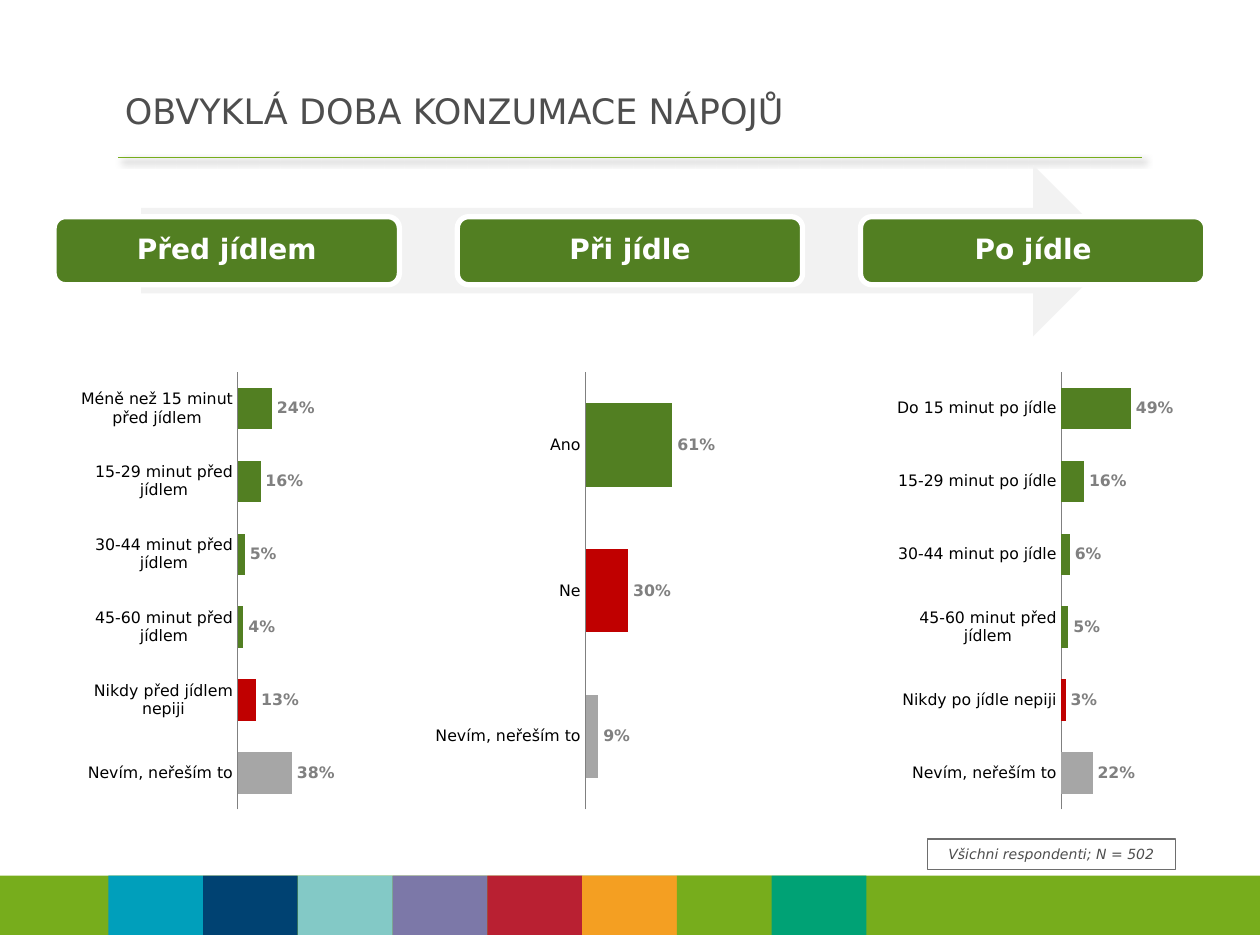
import pptx
import pptx.util
import pptx.chart.data
import pptx.dml.color
import pptx.enum.chart
import pptx.enum.shapes
import pptx.enum.text
import pptx.oxml
from pptx.oxml.ns import nsdecls
from pptx.util import Inches

FACE = "DejaVu Sans"
HUES = {
    "leaf": "527F22", "lime": "77AD1C", "red": "C00000", "grey": "A6A6A6",
    "pale": "F2F2F2", "white": "FFFFFF", "black": "000000", "text": "4E4E4E",
    "label": "808080", "edge": "6E6E6E", "sky": "009FBB", "navy": "004272",
    "aqua": "83C9C6", "plum": "7C78A8", "wine": "B92032", "gold": "F49F22",
    "jade": "00A275",
}
SHAPE = pptx.enum.shapes.MSO_SHAPE
ALIGN = pptx.enum.text.PP_ALIGN
MID = pptx.enum.text.MSO_ANCHOR.MIDDLE


def hue(name):
    return pptx.dml.color.RGBColor.from_string(HUES[name])


def style(font, size, tint, **more):
    for key, val in {"name": FACE, "size": pptx.util.Pt(size), **more}.items():
        setattr(font, key, val)
    font.color.rgb = hue(tint)


def paint(fill, tint):
    fill.solid()
    fill.fore_color.rgb = hue(tint)


def add_form(slide, kind, box, tint=None, edge=None, width=0.75):
    form = slide.shapes.add_shape(kind, *map(Inches, box))
    form.shadow.inherit = False
    if tint:
        paint(form.fill, tint)
    else:
        form.fill.background()
    if edge:
        form.line.color.rgb = hue(edge)
        form.line.width = pptx.util.Pt(width)
    else:
        form.line.fill.background()
    return form


def write(form, text, align, size, tint, **more):
    para = form.text_frame.paragraphs[0]
    para.alignment = align
    run = para.add_run()
    run.text = text
    style(run.font, size, tint, **more)
    return para


def add_head(slide, box, text):
    title = slide.shapes.title
    left, top, wide, high = map(Inches, box)
    for key, val in {"left": left, "top": top, "width": wide, "height": high}.items():
        setattr(title, key, val)
    title.text_frame.vertical_anchor = MID
    title.text_frame.word_wrap = True
    para = write(title, text, ALIGN.LEFT, 20, "text")
    para.space_after = pptx.util.Pt(3)

    # Rule with a soft shadow below the title
    rule = slide.shapes.add_connector(
        pptx.enum.shapes.MSO_CONNECTOR.STRAIGHT,
        Inches(0.94), Inches(1.25), Inches(9.06), Inches(1.25))
    rule.line.color.rgb = hue("lime")
    rule.line.width = pptx.util.Pt(0.75)
    rule._element.spPr.append(pptx.oxml.parse_xml(
        f'<a:effectLst {nsdecls("a")}>'
        '<a:outerShdw blurRad="50800" dist="38100" dir="2700000" algn="tl" rotWithShape="0">'
        '<a:srgbClr val="000000"><a:alpha val="40000"/></a:srgbClr>'
        '</a:outerShdw></a:effectLst>'))


def add_band(slide, box, tints):
    left, top, wide, high = box
    add_form(slide, SHAPE.RECTANGLE, box, "lime")
    step = 0.752
    for i, tint in enumerate(tints):
        tile = (left + 0.86 + i * step, top, step, high)
        add_form(slide, SHAPE.RECTANGLE, tile, tint)


def add_flow(slide, box, steps):
    left, top, wide, high = box
    add_form(slide, SHAPE.RIGHT_ARROW, (1.12, top, 7.76, high), "pale")
    card, tall = 2.74, 0.54
    pitch = (wide - card) / (len(steps) - 1)
    for i, text in enumerate(steps):
        place = (left + i * pitch, top + (high - tall) / 2, card, tall)
        form = add_form(slide, SHAPE.ROUNDED_RECTANGLE, place, "leaf", "white", 3)
        form.text_frame.vertical_anchor = MID
        para = write(form, text, ALIGN.CENTER, 16, "white", bold=True)
        para.line_spacing = 0.9


def add_bars(slide, box, rows):
    data = pptx.chart.data.CategoryChartData(number_format="0%")
    data.categories = [name for name, _ in rows]
    data.add_series("Series 1", [val for _, val in rows])
    chart = slide.shapes.add_chart(
        pptx.enum.chart.XL_CHART_TYPE.BAR_CLUSTERED, *map(Inches, box), data).chart
    chart.has_legend = chart.has_title = False
    style(chart.font, 18, "black")

    # Axes
    cat, val = chart.category_axis, chart.value_axis
    none = pptx.enum.chart.XL_TICK_MARK.NONE
    for key, item in {"reverse_order": True, "major_tick_mark": none,
                      "minor_tick_mark": none}.items():
        setattr(cat, key, item)
    style(cat.tick_labels.font, 9, "black")
    cat.format.line.color.rgb = hue("label")
    cat.format.line.width = pptx.util.Pt(0.75)
    for key, item in {"minimum_scale": 0, "maximum_scale": 1, "visible": False,
                      "has_major_gridlines": False}.items():
        setattr(val, key, item)

    # Bars: the last two answers stand out
    plot = chart.plots[0]
    plot.gap_width = 75
    plot.vary_by_categories = False
    bars = plot.series[0]
    bars.invert_if_negative = False
    paint(bars.format.fill, "leaf")
    for i, tint in enumerate(("red", "grey"), len(rows) - 2):
        paint(bars.points[i].format.fill, tint)

    # Value labels
    tags = bars.data_labels
    for key, item in {"show_value": True, "number_format": "0%",
                      "number_format_is_linked": False,
                      "position": pptx.enum.chart.XL_LABEL_POSITION.OUTSIDE_END}.items():
        setattr(tags, key, item)
    style(tags.font, 9, "label", bold=True)

    # Fixed plot area
    area = chart._chartSpace.chart.plotArea
    for old in area.findall(pptx.oxml.ns.qn("c:layout")):
        area.remove(old)
    spots = "".join(f'<c:{key} val="{item}"/>' for key, item in (
        ("layoutTarget", "inner"), ("xMode", "edge"), ("yMode", "edge"),
        ("x", 0.477), ("y", 0.127), ("w", 0.416), ("h", 0.873)))
    area.insert(0, pptx.oxml.parse_xml(
        f'<c:layout {nsdecls("c")}><c:manualLayout>{spots}</c:manualLayout></c:layout>'))


def add_note(slide, box, text):
    form = add_form(slide, SHAPE.RECTANGLE, box, edge="edge")
    form.text_frame.vertical_anchor = MID
    write(form, text, ALIGN.CENTER, 8, "text", italic=True)


def main():
    deck = pptx.Presentation()
    deck.slide_width, deck.slide_height = Inches(10), Inches(7.5)
    slide = deck.slides.add_slide(deck.slide_layouts[5])

    add_band(slide, (0, 6.95, 10, 0.47),
             ("sky", "navy", "aqua", "plum", "wine", "gold", "lime", "jade"))
    add_head(slide, (0.89, 0.62, 8.87, 0.51), "OBVYKLÁ DOBA KONZUMACE NÁPOJŮ")

    # One chart for each step
    charts = (
        (0.59, (("Méně než 15 minut před jídlem", 0.24),
                ("15-29 minut před jídlem", 0.16),
                ("30-44 minut před jídlem", 0.05),
                ("45-60 minut před jídlem", 0.04),
                ("Nikdy před jídlem nepiji", 0.13),
                ("Nevím, neřeším to", 0.38))),
        (3.35, (("Ano", 0.61), ("Ne", 0.3), ("Nevím, neřeším to", 0.09))),
        (7.12, (("Do 15 minut po jídle", 0.49),
                ("15-29 minut po jídle", 0.16),
                ("30-44 minut po jídle", 0.06),
                ("45-60 minut před jídlem", 0.05),
                ("Nikdy po jídle nepiji", 0.03),
                ("Nevím, neřeším to", 0.22))),
    )
    for left, rows in charts:
        add_bars(slide, (left, 2.45, 2.72, 3.98), rows)

    add_flow(slide, (0.43, 1.31, 9.14, 1.36), ("Před jídlem", "Při jídle", "Po jídle"))
    add_note(slide, (7.36, 6.66, 1.97, 0.24), "Všichni respondenti; N = 502")
    deck.save("out.pptx")


if __name__ == "__main__":
    main()
